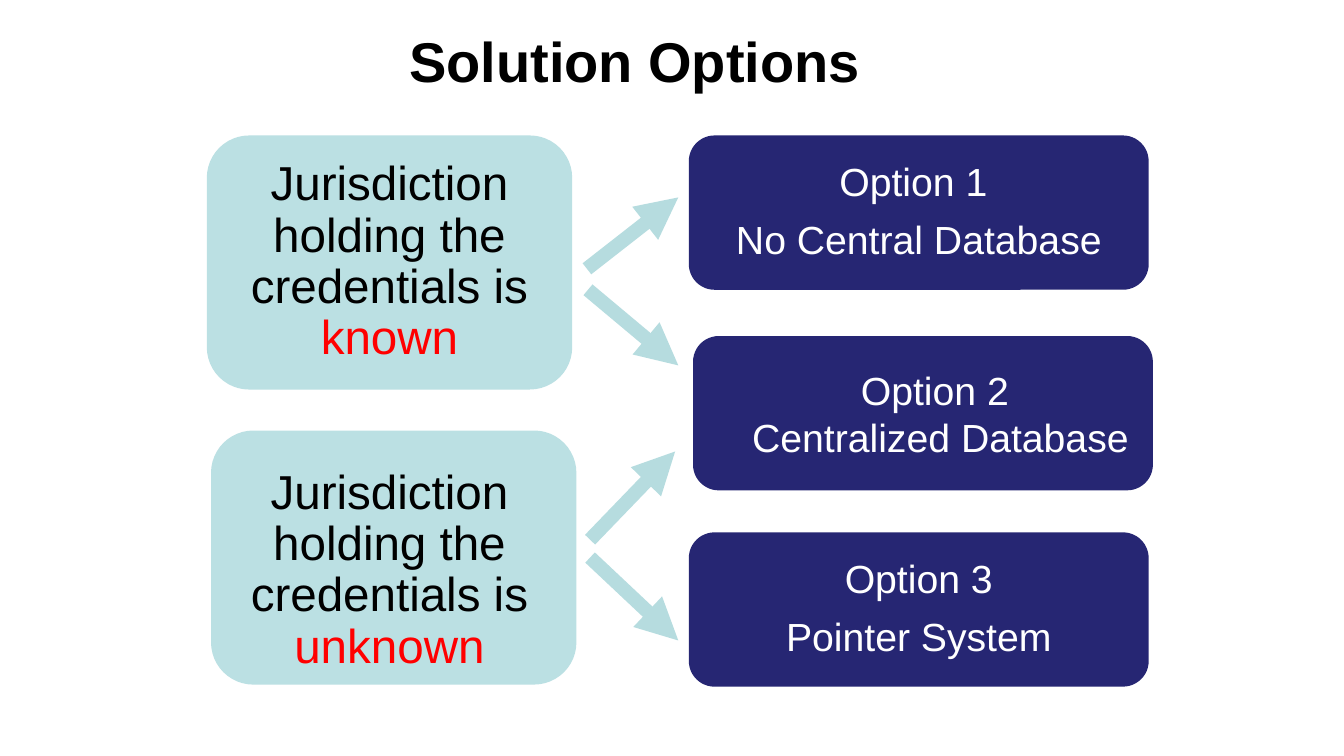
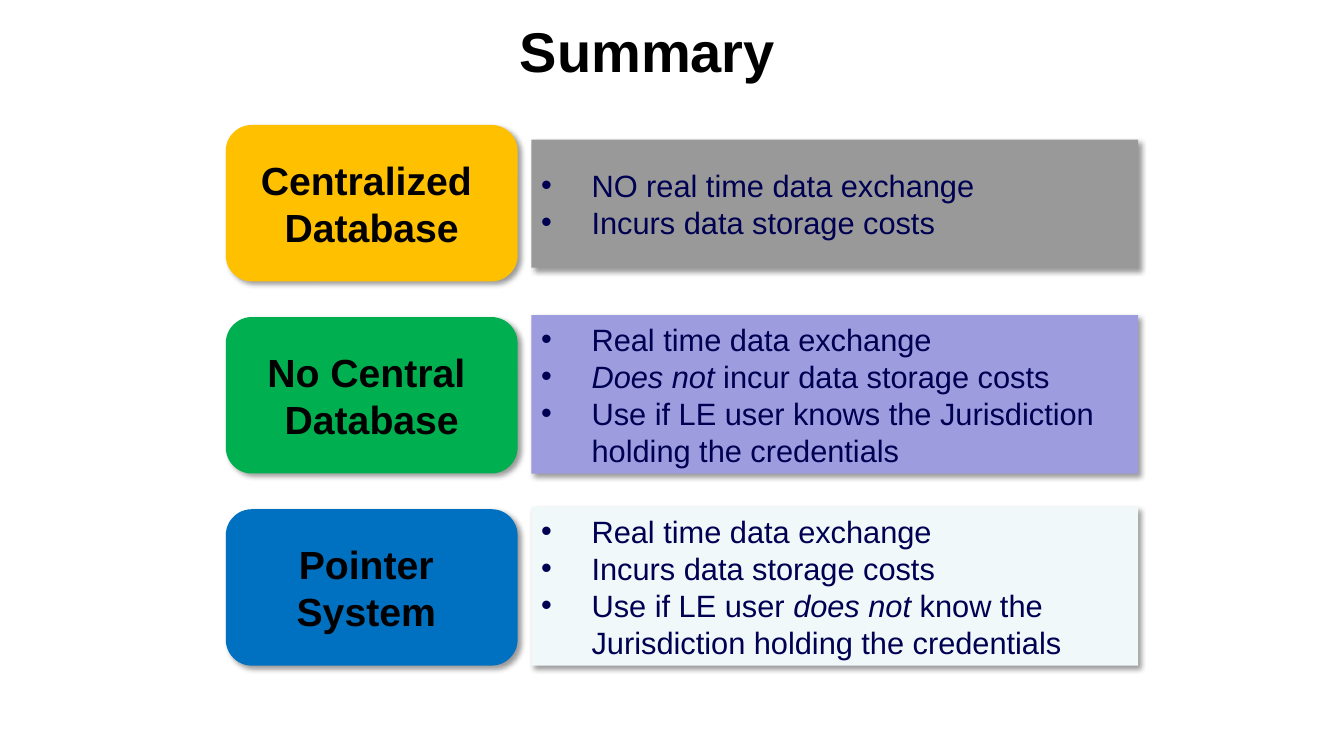
from lxml import etree
from pptx import Presentation
from pptx import util as u
from pptx.dml.color import RGBColor
from pptx.enum import shapes, text
from pptx.oxml import ns

PX = 9525
FONT = "Arial"
BLACK = RGBColor(0x00, 0x00, 0x00)
WHITE = RGBColor(0xFF, 0xFF, 0xFF)
RED = RGBColor(0xFF, 0x00, 0x00)
PALE_TEAL = RGBColor(0xBB, 0xE0, 0xE3)
ARROW_TEAL = RGBColor(0xB6, 0xDC, 0xDF)
NAVY = RGBColor(0x26, 0x26, 0x73)
INK = RGBColor(0x00, 0x00, 0x52)
AMBER = RGBColor(0xFF, 0xC0, 0x00)
GREEN = RGBColor(0x00, 0xB0, 0x50)
BLUE = RGBColor(0x00, 0x70, 0xC0)
GREY = RGBColor(0x99, 0x99, 0x99)
LILAC = RGBColor(0x9C, 0x9C, 0xDF)
MIST = RGBColor(0xF0, 0xF8, 0xF9)


def px(*lengths):
    """Turn pixel lengths into a list of EMU lengths."""
    return [u.Emu(length * PX) for length in lengths]


def add_child(parent, tag, **attributes):
    """Append a DrawingML element and return it."""
    child = etree.SubElement(parent, ns.qn(tag))
    for name, value in attributes.items():
        child.set(name, str(value))
    return child


def set_font(paragraph, size, color, bold=False):
    """Give a paragraph the deck font."""
    font = paragraph.font
    font.name, font.size, font.bold = FONT, u.Pt(size), bold
    font.color.rgb = color


def add_titled_slide(presentation, title, box):
    """Add a title-only slide with its title in the given box."""
    slide = presentation.slides.add_slide(presentation.slide_layouts[5])
    shape = slide.shapes.title
    shape.left, shape.top, shape.width, shape.height = px(*box)
    frame = shape.text_frame
    frame.text = title
    frame.auto_size = text.MSO_AUTO_SIZE.NONE
    frame.vertical_anchor = text.MSO_ANCHOR.MIDDLE
    paragraph = frame.paragraphs[0]
    paragraph.alignment = text.PP_ALIGN.CENTER
    set_font(paragraph, 40, BLACK, bold=True)
    return slide


def add_box(slide, preset, box, fill):
    """Add a filled shape without outline or shadow."""
    shape = slide.shapes.add_shape(preset, *px(*box))
    shape.shadow.inherit = False
    shape.fill.solid()
    shape.fill.fore_color.rgb = fill
    shape.line.fill.background()
    frame = shape.text_frame
    frame.word_wrap = True
    frame.vertical_anchor = text.MSO_ANCHOR.MIDDLE
    return shape


def set_margins(frame, left, top, right, bottom):
    """Set the text margins of a frame in pixels."""
    (frame.margin_left, frame.margin_top,
     frame.margin_right, frame.margin_bottom) = px(left, top, right, bottom)


def add_paragraphs(frame, count):
    """Return the given number of paragraphs of an empty frame."""
    return [frame.paragraphs[0]] + [frame.add_paragraph() for _ in range(count - 1)]


def cast_shadow(shape):
    """Give a shape a soft shadow towards the lower right."""
    effects = shape._element.spPr.find(ns.qn("a:effectLst"))
    shadow = add_child(effects, "a:outerShdw", blurRad=50800, dist=38100,
                       dir=2700000, algn="tl", rotWithShape=0)
    color = add_child(shadow, "a:srgbClr", val="000000")
    add_child(color, "a:alpha", val=40000)


def add_situation(slide, left, top, state, margins):
    """Add a pale box naming what is known about the jurisdiction."""
    shape = add_box(slide, shapes.MSO_SHAPE.ROUNDED_RECTANGLE,
                    (left, top, 348, 242), PALE_TEAL)
    set_margins(shape.text_frame, *margins)
    paragraph = shape.text_frame.paragraphs[0]
    paragraph.alignment = text.PP_ALIGN.CENTER
    paragraph.line_spacing = 0.9
    set_font(paragraph, 34, BLACK)
    paragraph.add_run().text = "Jurisdiction holding the credentials is "
    run = paragraph.add_run()
    run.text = state
    run.font.color.rgb = RED


def add_option(slide, left, top, lines, margins=(23, 7, 23, 7), spacing=0.9, gap=11):
    """Add a navy box with the number and name of an option."""
    shape = add_box(slide, shapes.MSO_SHAPE.ROUNDED_RECTANGLE,
                    (left, top, 438, 147), NAVY)
    set_margins(shape.text_frame, *margins)
    for paragraph, line in zip(add_paragraphs(shape.text_frame, len(lines)), lines):
        paragraph.alignment = text.PP_ALIGN.CENTER
        paragraph.line_spacing = spacing
        paragraph.space_after = u.Pt(gap)
        set_font(paragraph, 28, WHITE)
        paragraph.add_run().text = line


def add_arrow(slide, start, end):
    """Add a thick arrow between two points."""
    arrow = slide.shapes.add_connector(shapes.MSO_CONNECTOR.STRAIGHT, *px(*start, *end))
    arrow.line.color.rgb = ARROW_TEAL
    arrow.line.width = u.Pt(10)
    add_child(arrow.line._get_or_add_ln(), "a:tailEnd", type="triangle")
    add_child(arrow._element.spPr, "a:effectLst")


def add_label(slide, box, name, fill):
    """Add the coloured name at the left of a summary row."""
    shape = add_box(slide, shapes.MSO_SHAPE.ROUNDED_RECTANGLE, box, fill)
    cast_shadow(shape)
    frame = shape.text_frame
    frame.text = name
    paragraph = frame.paragraphs[0]
    paragraph.alignment = text.PP_ALIGN.CENTER
    set_font(paragraph, 28, BLACK, bold=True)


def add_points(slide, box, points, fill):
    """Add a panel of bullets; every second part of a point is italic."""
    shape = add_box(slide, shapes.MSO_SHAPE.RECTANGLE, box, fill)
    cast_shadow(shape)
    for paragraph, parts in zip(add_paragraphs(shape.text_frame, len(points)), points):
        paragraph.alignment = text.PP_ALIGN.LEFT
        properties = paragraph._p.get_or_add_pPr()
        properties.set("marL", "457200")
        properties.set("indent", "-457200")
        add_child(properties, "a:buFont", typeface=FONT)
        add_child(properties, "a:buChar", char="•")
        set_font(paragraph, 22, INK)
        for index, part in enumerate(parts):
            if part:
                run = paragraph.add_run()
                run.text = part
                run.font.italic = index % 2 == 1


def add_summary_row(slide, top, name, label_fill, points, panel_fill):
    """Add a label and its panel, sized by the number of points."""
    add_label(slide, (215, top, 278, 149), name, label_fill)
    offset, height = (14, 122) if len(points) < 3 else (-2, 151)
    add_points(slide, (506, top + offset, 578, height), points, panel_fill)


def build_options(presentation):
    """Build the slide that leads from situations to options."""
    slide = add_titled_slide(presentation, "Solution Options", (364, 20, 481, 74))
    add_situation(slide, 197, 129, "known", (14, 7, 14, 7))
    add_situation(slide, 201, 410, "unknown", (10, 25, 18, 0))
    add_option(slide, 656, 129, ["Option 1 ", "No Central Database"])
    add_option(slide, 660, 320, ["Option 2 ", "Centralized Database"],
               margins=(44, 7, 11, 7), spacing=1.0, gap=0)
    add_option(slide, 656, 507, ["Option 3", "Pointer System"])
    for start, end in [((559, 256), (646, 188)), ((560, 276), (646, 348)),
                       ((562, 514), (643, 430)), ((562, 531), (646, 610))]:
        add_arrow(slide, start, end)


def build_summary(presentation):
    """Build the slide that compares the three options."""
    slide = add_titled_slide(presentation, "Summary", (188, 11, 857, 74))
    real_time = ["Real time data exchange"]
    costs = ["Incurs data storage costs"]
    rows = [
        ("Centralized \vDatabase", AMBER,
         [["NO real time data exchange"], costs], GREY),
        ("No Central \vDatabase", GREEN,
         [real_time, ["", "Does not ", "incur data storage costs"],
          ["Use if LE user knows the Jurisdiction holding the credentials"]], LILAC),
        ("Pointer \vSystem ", BLUE,
         [real_time, costs,
          ["Use if LE user ", "does not ",
           "know the Jurisdiction holding the credentials"]], MIST),
    ]
    for index, row in enumerate(rows):
        add_summary_row(slide, 119 + 183 * index, *row)


def main():
    """Build and save the presentation."""
    presentation = Presentation()
    presentation.slide_width, presentation.slide_height = px(1280, 720)
    build_options(presentation)
    build_summary(presentation)
    presentation.save("out.pptx")


if __name__ == "__main__":
    main()
